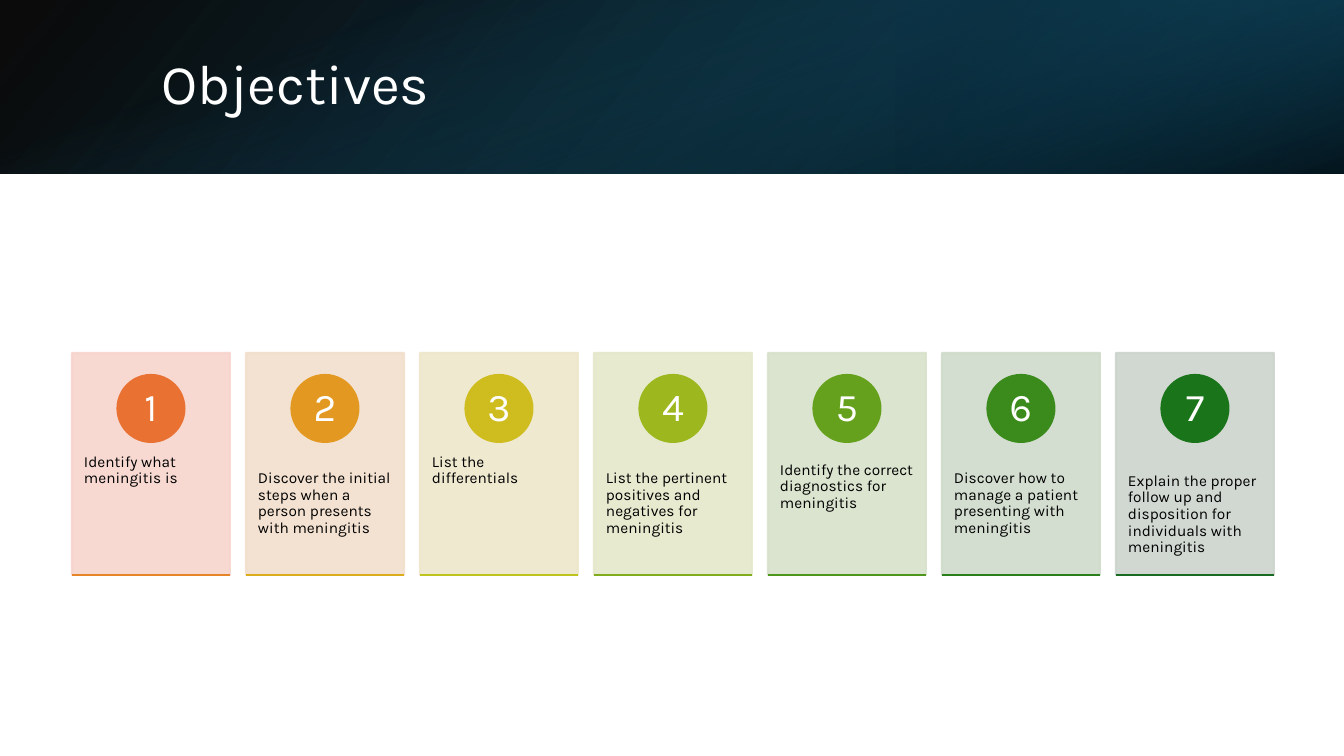
from lxml.etree import SubElement
from pptx import Presentation
from pptx.dml.color import RGBColor
from pptx.enum.shapes import MSO_CONNECTOR, MSO_SHAPE
from pptx.enum.text import MSO_ANCHOR as ANCHOR, PP_ALIGN as ALIGN
from pptx.oxml.ns import qn
from pptx.util import Pt

PX = 9071.43  # EMU in one px
SLIDE_WIDTH, SLIDE_HEIGHT = 1344, 756
BANNER_HEIGHT = 174
FONT = "Karla"
COLORS = {
    "white": "FFFFFF", "black": "000000",
    "navy": "104862", "deep": "0B3041", "teal": "156082",
}
# Objective, card colour, circle colour, baseline colour
OBJECTIVES = [
    ("Identify what meningitis is", "F7D5CE", "E97132", "E68429"),
    ("Discover the initial steps when a person presents with meningitis",
     "F2DFCC", "E39921", "DBAD1D"),
    ("List the differentials", "EEE7CB", "CFBC1E", "BEC31E"),
    ("List the pertinent positives and negatives for meningitis",
     "E5E8CA", "9DB81E", "80AC1E"),
    ("Identify the correct diagnostics for meningitis",
     "D8E2CA", "66A11D", "4F961D"),
    ("Discover how to manage a patient presenting with meningitis",
     "CFDBCB", "3B8B1C", "29801B"),
    ("Explain the proper follow up and disposition for individuals with meningitis",
     "CCD4CD", "1A751A", "196B24"),
]
TITLE_FORMAT = {"size": 40, "color": COLORS["white"], "align": ALIGN.LEFT,
                "anchor": ANCHOR.MIDDLE, "insets": (10, 5)}
NUMBER_FORMAT = {"size": 28, "color": COLORS["white"], "align": ALIGN.CENTER,
                 "anchor": ANCHOR.MIDDLE, "insets": (5, 1)}
OBJECTIVE_FORMAT = {"size": 11, "color": COLORS["black"], "align": ALIGN.LEFT,
                    "anchor": ANCHOR.TOP, "insets": (12, 36)}


def px(*lengths):
    return [round(length * PX) for length in lengths]


def set_opacity(fill_element, percent):
    color = fill_element.find(qn("a:srgbClr"))
    SubElement(color, qn("a:alpha"), val=str(percent * 1000))


def add_plain_shape(shapes, preset, box, color, opacity=100):
    """Add a shape whose fill and outline share one colour."""
    shape = shapes.add_shape(preset, *px(*box))
    shape.shadow.inherit = False
    shape.line.width = Pt(1.5)
    for fill in (shape.fill, shape.line.fill):
        fill.solid()
        fill.fore_color.rgb = RGBColor.from_string(color)
    if opacity < 100:
        for element in list(shape._element.spPr.iter(qn("a:solidFill"))):
            set_opacity(element, opacity)
    return shape


def add_gradient(shapes, box, angle, stops, rotation=0, flip=False):
    """Add an unlined rectangle; stops are (position, colour, opacity)."""
    shape = shapes.add_shape(MSO_SHAPE.RECTANGLE, *px(*box))
    shape.shadow.inherit = False
    shape.line.fill.background()
    shape.rotation = rotation
    if flip:
        shape._element.spPr.find(qn("a:xfrm")).set("flipH", "1")
    shape.fill.gradient()
    gradient = shape._element.spPr.find(qn("a:gradFill"))
    stop_list = gradient.find(qn("a:gsLst"))
    for stop in list(stop_list):
        stop_list.remove(stop)
    for position, color, opacity in stops:
        stop = SubElement(stop_list, qn("a:gs"), pos=str(position * 1000))
        SubElement(stop, qn("a:srgbClr"), val=COLORS[color])
        set_opacity(stop, opacity)
    direction = gradient.find(qn("a:lin"))
    direction.set("ang", str(angle * 60000))
    direction.set("scaled", "0")


def write_text(shape, text, style):
    frame = shape.text_frame
    side, end = px(*style["insets"])
    frame_values = {
        "margin_left": side, "margin_right": side,
        "margin_top": end, "margin_bottom": end,
        "word_wrap": True, "vertical_anchor": style["anchor"],
    }
    for name, value in frame_values.items():
        setattr(frame, name, value)
    paragraph = frame.paragraphs[0]
    paragraph.alignment = style["align"]
    paragraph.line_spacing = 0.9
    run = paragraph.add_run()
    run.text = text
    for name, value in {"name": FONT, "size": Pt(style["size"])}.items():
        setattr(run.font, name, value)
    run.font.color.rgb = RGBColor.from_string(style["color"])


def add_banner(slide, left, top, width, height):
    add_gradient(slide.shapes, (left, top, width, height), 140,
                 [(0, "black", 96), (100, "navy", 100)], flip=True)
    third = width // 3
    add_gradient(slide.shapes, (left + width - third, top, third, height), 320,
                 [(19, "deep", 68), (100, "teal", 79)], rotation=180, flip=True)
    # A quarter turn about the centre lays this tall shape over the banner
    shift = (width - height) // 2
    add_gradient(slide.shapes, (left + shift, top - shift, height, width), 340,
                 [(23, "teal", 0), (99, "black", 74)], rotation=90)


def add_title(slide, left, top, width, height):
    title = slide.shapes.title
    box = dict(zip(("left", "top", "width", "height"), px(left, top, width, height)))
    for name, value in box.items():
        setattr(title, name, value)
    write_text(title, "Objectives", TITLE_FORMAT)
    # Bring the title in front of the banner
    slide.shapes._spTree.append(title._element)


def add_baseline(shapes, left, top, width, color):
    line = shapes.add_connector(MSO_CONNECTOR.STRAIGHT,
                                *px(left, top, left + width, top))
    line.line.width = Pt(1.5)
    line.line.color.rgb = RGBColor.from_string(color)
    SubElement(line._element.spPr, qn("a:effectLst"))


def add_card(shapes, left, top, width, height, number, objective):
    text, card_color, circle_color, baseline_color = objective
    add_plain_shape(shapes, MSO_SHAPE.RECTANGLE, (left, top, width, height),
                    card_color, opacity=90)
    text_box = shapes.add_textbox(*px(left, top + 84, width, height - 89))
    write_text(text_box, text, OBJECTIVE_FORMAT)

    circle, label = 67, 47
    circle_left, circle_top = left + (width - circle) / 2, top + 22
    add_plain_shape(shapes, MSO_SHAPE.OVAL,
                    (circle_left, circle_top, circle, circle), circle_color)
    inset = (circle - label) / 2
    number_box = shapes.add_textbox(
        *px(circle_left + inset, circle_top + inset, label, label))
    write_text(number_box, str(number), NUMBER_FORMAT)
    add_baseline(shapes, left, top + height, width, baseline_color)


def add_cards(slide, left, top, width, height):
    """Spread the objective cards evenly across the box in one group."""
    group = slide.shapes.add_group_shape()
    card_width = 158
    pitch = (width - card_width) / (len(OBJECTIVES) - 1)
    for index, objective in enumerate(OBJECTIVES):
        add_card(group.shapes, left + index * pitch, top, card_width, height,
                 index + 1, objective)


def main():
    presentation = Presentation()
    presentation.slide_width, presentation.slide_height = px(SLIDE_WIDTH, SLIDE_HEIGHT)
    slide = presentation.slides.add_slide(presentation.slide_layouts[5])
    add_banner(slide, 0, 0, SLIDE_WIDTH, BANNER_HEIGHT)
    add_title(slide, 151, 38, 1107, 97)
    add_cards(slide, 72, 353, 1202, 222)
    presentation.save("out.pptx")


if __name__ == "__main__":
    main()
